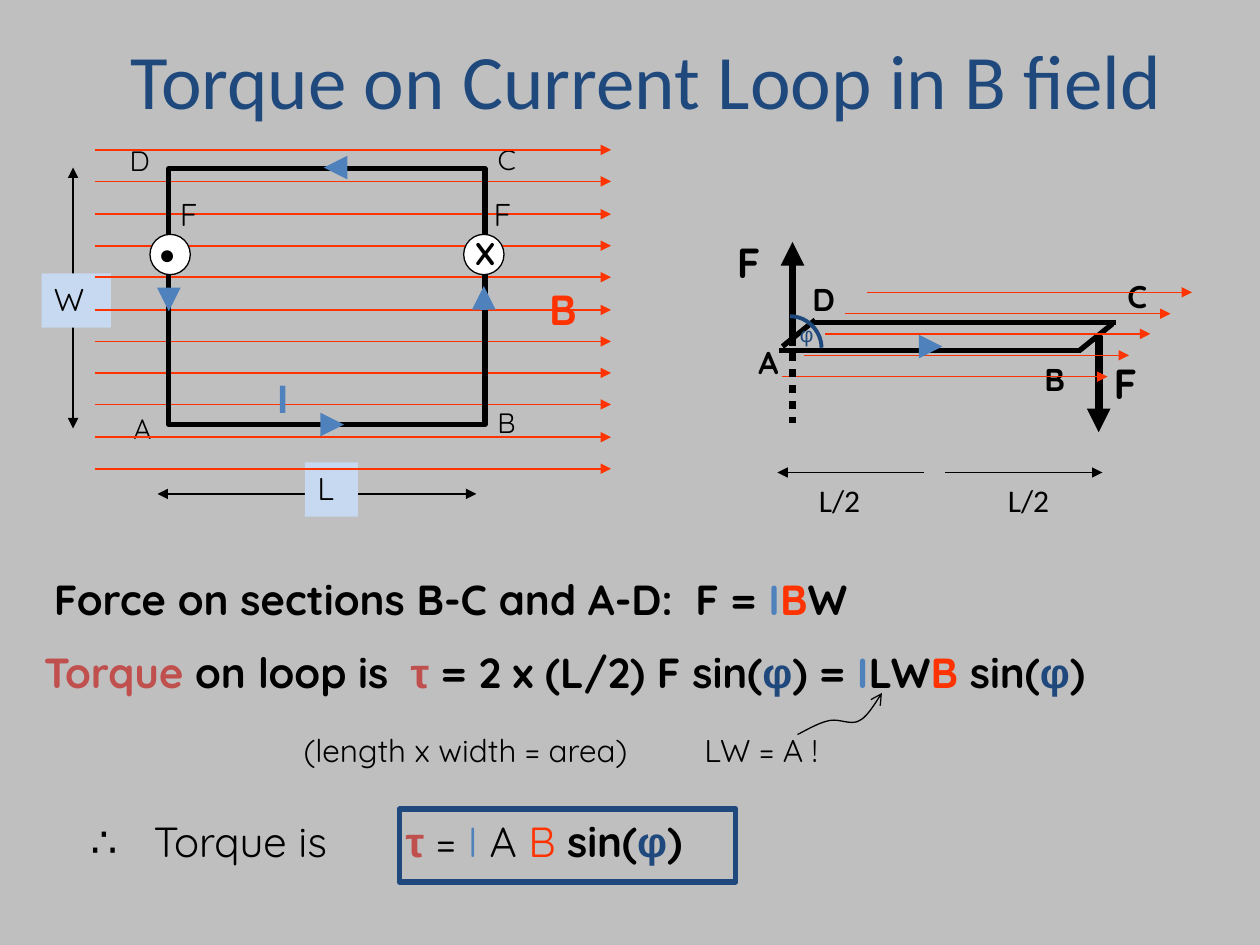
from lxml.etree import SubElement
from pptx import Presentation
from pptx.dml.color import RGBColor
from pptx.enum.dml import MSO_LINE
from pptx.enum.shapes import MSO_CONNECTOR, MSO_SHAPE
from pptx.enum.text import MSO_ANCHOR, MSO_AUTO_SIZE, PP_ALIGN
from pptx.oxml.ns import qn
from pptx.util import Pt

PX = 9144
GRAY = RGBColor(0xBF, 0xBF, 0xBF)
BLACK = RGBColor(0, 0, 0)
WHITE = RGBColor(0xFF, 0xFF, 0xFF)
NAVY = RGBColor(0x1F, 0x49, 0x7D)
BLUE = RGBColor(0x4F, 0x81, 0xBD)
PALE = RGBColor(0xC6, 0xD9, 0xF1)
RED = RGBColor(0xC0, 0x50, 0x4D)
ORANGE = RGBColor(0xFF, 0x33, 0x00)
GREEK = {"name": "Arial"}
BOLD = {"bold": True}
GREEK_BOLD = {**GREEK, **BOLD}


def px(*values):
    return [round(v * PX) for v in values]


def assign(obj, values):
    for key, value in values.items():
        setattr(obj, key, value)


class Canvas:
    """Holds the base text style and the current slide."""

    def __init__(self, s):
        self.s = s
        self.base = {"name": "Quicksand", "size": Pt(18), "bold": False}

    def title(self, text, x, y, w, h):
        sp = self.s.shapes.title
        assign(sp, dict(zip(("left", "top", "width", "height"), px(x, y, w, h))))
        tf = sp.text_frame
        assign(tf, {"text": text, "auto_size": MSO_AUTO_SIZE.NONE,
                    "vertical_anchor": MSO_ANCHOR.MIDDLE})
        p = tf.paragraphs[0]
        p.alignment = PP_ALIGN.CENTER
        assign(p.runs[0].font, {"name": "Calibri", "size": Pt(44)})
        p.runs[0].font.color.rgb = NAVY

    def text(self, x, y, w, h, runs, fill=None, wrap=True, indent=10, tabs=(), **style):
        sp = self.s.shapes.add_textbox(*px(x, y, w, h))
        if fill is not None:
            sp.fill.solid()
            sp.fill.fore_color.rgb = fill
        tf = sp.text_frame
        assign(tf, {"word_wrap": wrap, "margin_left": indent * PX,
                    "auto_size": MSO_AUTO_SIZE.SHAPE_TO_FIT_TEXT})
        p = tf.paragraphs[0]
        if tabs:
            tab_list = SubElement(p._p.get_or_add_pPr(), qn("a:tabLst"))
            for pos in tabs:
                SubElement(tab_list, qn("a:tab"), pos=str(pos * PX), algn="l")
        for words, color, *extra in runs:
            r = p.add_run()
            r.text = words
            assign(r.font, {**self.base, **style, **(extra[0] if extra else {})})
            r.font.color.rgb = color

    def label(self, x, y, w, h, words, color=BLACK, **options):
        self.text(x, y, w, h, [(words, color)], **options)

    def stroke(self, sp, color, width, ends):
        sp.line.color.rgb = color
        sp.line.width = Pt(width)
        ln = sp.line._get_or_add_ln()
        for tag, kind in ends.items():
            SubElement(ln, qn(f"a:{tag}"), type=kind)

    def line(self, x1, y1, x2, y2, color=BLACK, width=1, dash=None, **ends):
        sp = self.s.shapes.add_connector(MSO_CONNECTOR.STRAIGHT, *px(x1, y1, x2, y2))
        SubElement(sp._element.spPr, qn("a:effectLst"))
        if dash:
            sp.line.dash_style = dash
        self.stroke(sp, color, width, ends)
        ln = sp.line._get_or_add_ln()
        ln.getparent().remove(ln)
        sp._element.spPr.find(qn("a:effectLst")).addprevious(ln)

    def arrow(self, *ends, **options):
        self.line(*ends, tailEnd="triangle", **options)

    def shape(self, kind, x, y, w, h, color, width, fill=None):
        sp = self.s.shapes.add_shape(kind, *px(x, y, w, h))
        sp.shadow.inherit = False
        if fill is None:
            sp.fill.background()
        else:
            sp.fill.solid()
            sp.fill.fore_color.rgb = fill
        self.stroke(sp, color, width, {})

    def curve(self, start, beziers, color, width, **ends):
        points, a = [], start
        for b, c, d in beziers:
            for t in (i / 12 for i in range(1, 13)):
                u = 1 - t
                points.append(px(*(u**3 * k + 3 * u * u * t * m + 3 * u * t * t * n + t**3 * o
                                   for k, m, n, o in zip(a, b, c, d))))
            a = d
        builder = self.s.shapes.build_freeform(*px(*start), scale=1.0)
        builder.add_line_segments(points, close=False)
        sp = builder.convert_to_shape()
        sp.shadow.inherit = False
        sp.fill.background()
        self.stroke(sp, color, width, ends)


def formulas(c):
    big = {"size": Pt(24)}
    c.text(25, 508, 858, 50, [
        ("Torque ", RED), ("on loop is\t", BLACK), ("τ ", RED, GREEK),
        ("= 2 x (L/2) F sin(", BLACK), ("φ", NAVY, GREEK), (") = ", BLACK), ("I", BLUE),
        ("LW", BLACK), ("B ", ORANGE), ("sin(", BLACK), ("φ", NAVY, GREEK), (")", BLACK),
    ], tabs=[291], bold=True, **big)
    c.text(33, 450, 662, 50, [
        ("Force on sections B-C and A-D:\tF = ", BLACK), ("I", BLUE), ("B", ORANGE),
        ("W", BLACK),
    ], tabs=[509], bold=True, **big)
    c.label(225, 575, 508, 43, "(length x width = area)\tLW = A !", indent=16, tabs=[318])
    c.text(0, 642, 739, 50, [
        ("∴\tTorque is\t", BLACK), ("τ", RED, GREEK_BOLD), (" = ", BLACK), ("I", BLUE),
        (" A ", BLACK), ("B ", ORANGE), ("sin(", BLACK, BOLD), ("φ", NAVY, GREEK_BOLD),
        (")", BLACK, BOLD),
    ], indent=72, tabs=[50, 250], **big)
    c.shape(MSO_SHAPE.RECTANGLE, 317, 642, 267, 58, NAVY, 3)


def top_view(c):
    both = {"headEnd": "triangle", "tailEnd": "triangle"}
    c.line(58, 133, 58, 340, **both)
    c.label(33, 217, 55, 43, "W", fill=PALE)
    c.line(125, 392, 378, 392, **both)
    c.label(242, 367, 42, 43, "L", fill=PALE)
    for name, x, y, w in (("A", 96, 322, 56), ("B", 385, 317, 50),
                          ("C", 385, 108, 41), ("D", 93, 109, 45)):
        c.label(x, y, w, 37, name, size=Pt(16))
    for i in range(11):
        y = round(119 + 25.3 * i)
        c.arrow(75, y, 485, y, color=ORANGE)
    c.label(426, 220, 68, 50, "B", ORANGE, size=Pt(24), bold=True)
    c.label(210, 290, 31, 50, "I", BLUE, size=Pt(24), bold=True, name="Calibri")
    c.shape(MSO_SHAPE.RECTANGLE, 134, 134, 251, 203, BLACK, 3)
    for ends in ((272, 133, 257, 133), (384, 246, 384, 227),
                 (259, 337, 273, 337), (134, 229, 134, 247)):
        c.arrow(*ends, color=BLUE, width=4.5)
    for x, mark, mark_x, mark_y, size, force_x in ((368, "X", 367, 181, 18, 382),
                                                   (119, "•", 117, 177, 24, 133)):
        c.shape(MSO_SHAPE.OVAL, x, 186, 32, 32, BLACK, 0.75, WHITE)
        c.label(mark_x, mark_y, 43, 40, mark, size=Pt(size), bold=True)
        c.label(force_x, 150, 51, 43, "F")


def side_view(c):
    for ends in ((618, 278, 858, 278), (646, 256, 886, 256),
                 (857, 278, 883, 257), (621, 275, 647, 254)):
        c.line(*ends, width=3)
    for name, x, y in (("A", 592, 267), ("B", 819, 281), ("C", 885, 215), ("D", 635, 217)):
        c.label(x, y, 50, 40, name, bold=True)
    c.arrow(872, 267, 872, 343, width=4.5)
    c.arrow(629, 268, 629, 192, width=4.5)
    for x, y in ((874, 279), (575, 183)):
        c.label(x, y, 64, 50, "F", size=Pt(24), bold=True)
    for i in range(5):
        shift = round(16.75 * i)
        c.arrow(621 + shift, 299 - shift, 879 + shift, 299 - shift, color=ORANGE, width=0.75)
    c.line(629, 268, 629, 336, width=4.5, dash=MSO_LINE.ROUND_DOT)
    c.curve((627, 251), [((641, 251), (652, 263), (652, 276))], NAVY, 2.25)
    c.label(625, 250, 42, 30, "φ", NAVY, size=Pt(12), name="Arial")
    c.arrow(733, 275, 748, 275, color=BLUE, width=4.5)
    c.curve((633, 583), [((641, 579), (649, 574), (658, 572)),
                         ((666, 570), (675, 576), (682, 572)),
                         ((689, 569), (697, 554), (700, 550))], BLACK, 0.75, tailEnd="arrow")
    c.arrow(750, 375, 875, 375, width=0.75)
    c.arrow(733, 375, 617, 375, width=0.75)
    for x in (640, 790):
        c.label(x, 377, 59, 43, "L/2", wrap=False, name="Calibri")


def main():
    prs = Presentation()
    prs.slide_width, prs.slide_height = px(1000, 750)
    s = prs.slides.add_slide(prs.slide_layouts[5])
    s.background.fill.solid()
    s.background.fill.fore_color.rgb = GRAY
    c = Canvas(s)
    c.title("Torque on Current Loop in B field", 67, 0, 892, 125)
    formulas(c)
    top_view(c)
    side_view(c)
    prs.save("out.pptx")


if __name__ == "__main__":
    main()
